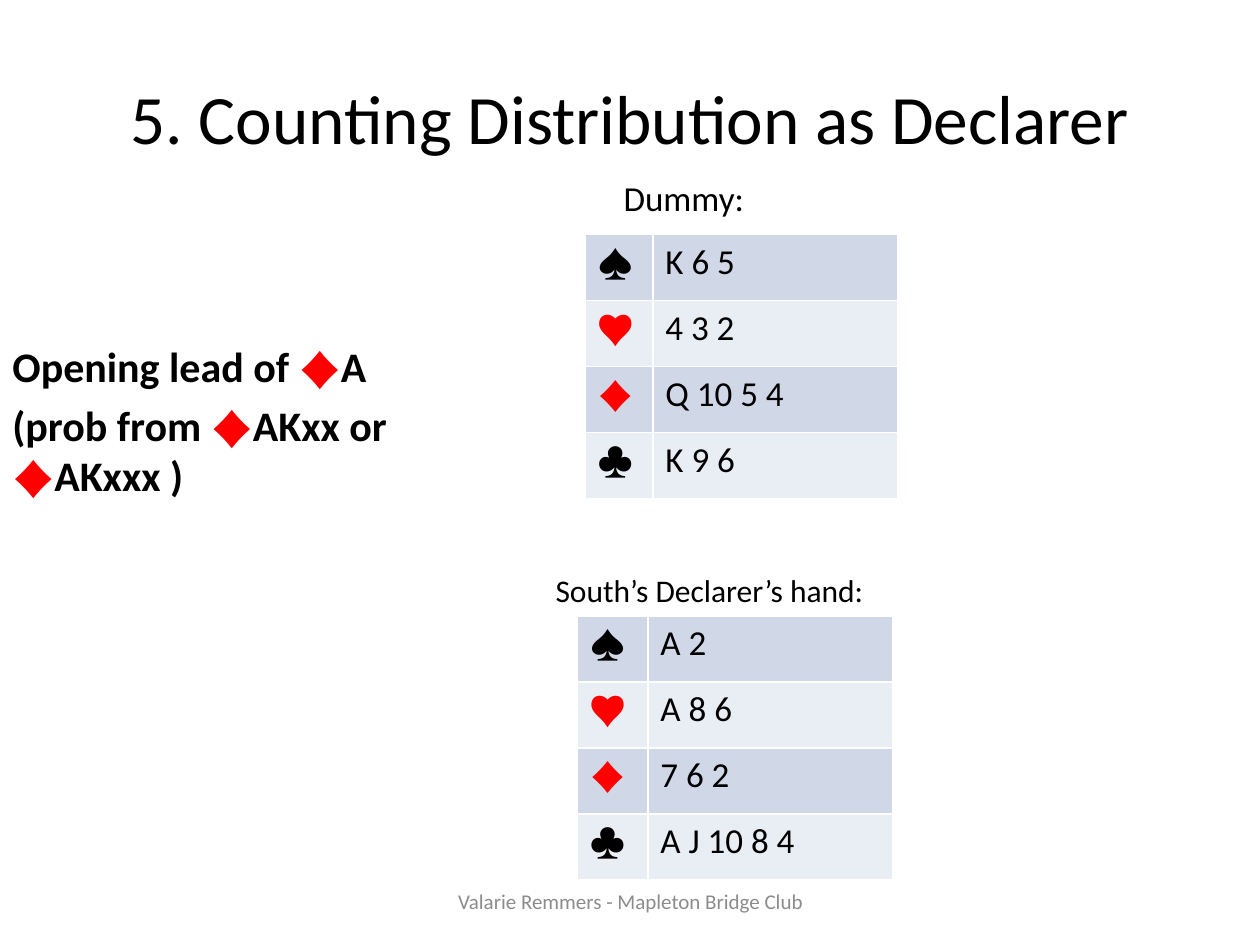
from itertools import groupby

from pptx import Presentation
from pptx.dml.color import RGBColor
from pptx.enum.text import MSO_ANCHOR, PP_ALIGN
from pptx.util import Cm, Pt

BLACK = RGBColor(0x00, 0x00, 0x00)
RED = RGBColor(0xFF, 0x00, 0x00)
GREY = RGBColor(0x8C, 0x8C, 0x8C)
BANDS = RGBColor(0xD0, 0xD8, 0xE8), RGBColor(0xE9, 0xED, 0xF4)
LEFT, CENTER = PP_ALIGN.LEFT, PP_ALIGN.CENTER
TOP, MIDDLE, BOTTOM = MSO_ANCHOR.TOP, MSO_ANCHOR.MIDDLE, MSO_ANCHOR.BOTTOM

FONT = "Calibri"
SUITS = "♠♥♦♣"
ROW = Cm(1.33)
SUIT_COL, CARD_COL = Cm(1.42), Cm(4.93)


def write(frame, text, size=20, color=BLACK, bold=False, align=LEFT, space=0):
    """Fill a text frame, one paragraph per line, with red suits in red."""
    for i, line in enumerate(text.split("\n")):
        para = frame.add_paragraph() if i else frame.paragraphs[0]
        para.alignment = align
        para.space_before = Pt(space)
        for red, chars in groupby(line, lambda char: char in "♥♦"):
            run = para.add_run()
            run.text = "".join(chars)
            font = run.font
            font.name, font.size, font.bold = FONT, Pt(size), bold
            font.color.rgb = RED if red else color


def add_label(slide, text, left, top, width, height, anchor=TOP, **form):
    """Add a wrapped text box and return its frame."""
    box = slide.shapes.add_textbox(Cm(left), Cm(top), Cm(width), Cm(height))
    frame = box.text_frame
    frame.word_wrap = True
    frame.vertical_anchor = anchor
    write(frame, text, **form)
    return frame


def add_grid(slide, rows, widths, left, top):
    """Add a banded table of suits or cards."""
    shape = slide.shapes.add_table(
        len(rows), len(widths), left, top, sum(widths), ROW * len(rows))
    table = shape.table
    table.first_row = False
    for col, width in zip(table.columns, widths):
        col.width = width
    for r, row in enumerate(rows):
        for c, text in enumerate(row):
            cell = table.cell(r, c)
            cell.fill.solid()
            cell.fill.fore_color.rgb = BANDS[r % 2]
            write(cell.text_frame, text)


def add_title(slide, text):
    """Place and format the title."""
    title = slide.shapes.title
    title.left, title.top = Cm(1.27), Cm(0.76)
    title.width, title.height = Cm(22.86), Cm(3.18)
    title.text_frame.vertical_anchor = MIDDLE
    write(title.text_frame, text, size=39.6, align=CENTER)


def main():
    """Build the slide and save it."""
    deck = Presentation()
    deck.slide_width, deck.slide_height = Cm(25.4), Cm(19.05)
    slide = deck.slides.add_slide(deck.slide_layouts[5])

    add_title(slide, "5. Counting Distribution as Declarer")
    lead = add_label(
        slide, "Opening lead of ♦A\n(prob from ♦AKxx or ♦AKxxx )",
        0, 8.64, 8.26, 3.78, anchor=BOTTOM, size=24, bold=True, space=4.8)
    lead.margin_bottom = Cm(2.34)

    add_label(slide, "Dummy:", 12.32, 3.36, 2.97, 1.17, anchor=BOTTOM)
    dummy = "K 6 5", "4 3 2", "Q 10 5 4", "K 9 6"
    add_grid(slide, list(zip(SUITS)), [SUIT_COL], Cm(11.8), Cm(4.73))
    add_grid(slide, list(zip(dummy)), [CARD_COL], Cm(13.16), Cm(4.73))

    add_label(slide, "South’s Declarer’s hand:", 10.95, 11.38, 8.69, 1.02,
              size=18)
    south = "A 2", "A 8 6", "7 6 2", "A J 10 8 4"
    add_grid(slide, list(zip(SUITS, south)), [SUIT_COL, CARD_COL],
             Cm(11.64), Cm(12.42))

    add_label(slide, "Valarie Remmers - Mapleton Bridge Club",
              8.69, 17.65, 8.05, 1.02, anchor=MIDDLE, size=12, color=GREY,
              align=CENTER)
    deck.save("out.pptx")


if __name__ == "__main__":
    main()
